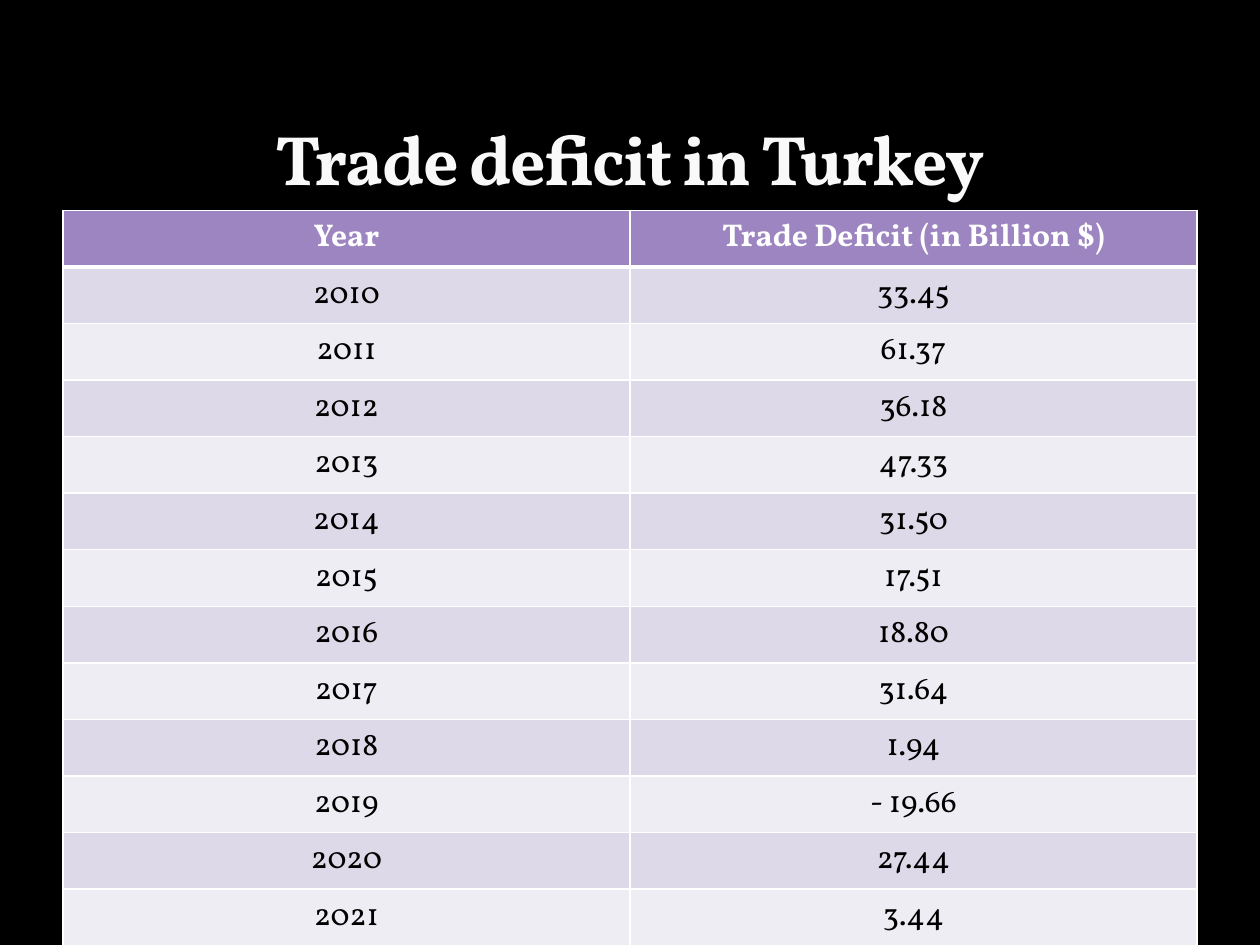
import pptx
import pptx.dml.color
import pptx.enum.text
import pptx.oxml.ns
import pptx.util
from lxml import etree

COLORS = {
    "background": "000000",
    "title": "F9F9F9",
    "header": "9C85C0",
    "band_dark": "DED9E8",
    "band_light": "EFEDF4",
    "border": "FFFFFF",
    "header_text": "FFFFFF",
    "body_text": "000000",
}
FONT = "Vollkorn"
SLIDE_W, SLIDE_H = pptx.util.Inches(10), pptx.util.Inches(7.5)
MARGIN = int(SLIDE_W * 0.05)
CONTENT_W = SLIDE_W - 2 * MARGIN
ROW_H = pptx.util.Inches(0.41)

HEADINGS = ("Year", "Trade Deficit (in Billion $)")
FIRST_YEAR = 2010
DEFICITS = ("33.45", "61.37", "36.18", "47.33", "31.50", "17.51",
            "18.80", "31.64", "1.94", "- 19.66", "27.44", "3.44")


def rgb(name):
    return pptx.dml.color.RGBColor.from_string(COLORS[name])


def add_centred_run(frame, text, size, color, bold):
    paragraph = frame.paragraphs[0]
    paragraph.alignment = pptx.enum.text.PP_ALIGN.CENTER
    run = paragraph.add_run()
    run.text = text
    run.font.name = FONT
    run.font.size = pptx.util.Pt(size)
    run.font.bold = bold
    run.font.color.rgb = rgb(color)
    return run


def set_borders(cell, bottom_width):
    """Outline a cell; borders must precede the fill in its properties."""
    properties = cell._tc.get_or_add_tcPr()
    widths = {"a:lnL": 1, "a:lnR": 1, "a:lnT": 1, "a:lnB": bottom_width}
    for position, (tag, width) in enumerate(widths.items()):
        line = etree.Element(pptx.oxml.ns.qn(tag), w=str(pptx.util.Pt(width)))
        fill = etree.SubElement(line, pptx.oxml.ns.qn("a:solidFill"))
        etree.SubElement(fill, pptx.oxml.ns.qn("a:srgbClr"), val=COLORS["border"])
        properties.insert(position, line)


def add_title(slide, text):
    title = slide.shapes.add_textbox(
        MARGIN, pptx.util.Inches(0.25), CONTENT_W, pptx.util.Inches(1.33))
    frame = title.text_frame
    frame.word_wrap = True
    frame.vertical_anchor = pptx.enum.text.MSO_ANCHOR.BOTTOM
    frame.margin_bottom = 0
    run = add_centred_run(frame, text, 40, "title", True)
    run.font._element.set("spc", "-100")


def add_deficit_table(slide):
    years = [(str(FIRST_YEAR + i), value) for i, value in enumerate(DEFICITS)]
    rows = [HEADINGS, *years]
    table = slide.shapes.add_table(
        len(rows), len(HEADINGS), MARGIN, pptx.util.Inches(1.67),
        CONTENT_W, ROW_H * len(rows)).table
    for r, values in enumerate(rows):
        table.rows[r].height = ROW_H
        is_header = r == 0
        band = "band_dark" if r % 2 else "band_light"
        for c, value in enumerate(values):
            cell = table.cell(r, c)
            cell.fill.solid()
            cell.fill.fore_color.rgb = rgb("header" if is_header else band)
            set_borders(cell, 3 if is_header else 1)
            if r == 1:
                top = cell._tc.tcPr.find(pptx.oxml.ns.qn("a:lnT"))
                top.set("w", str(pptx.util.Pt(3)))
            add_centred_run(cell.text_frame, value, 18,
                            "header_text" if is_header else "body_text", is_header)


def main():
    deck = pptx.Presentation()
    deck.slide_width, deck.slide_height = SLIDE_W, SLIDE_H
    slide = deck.slides.add_slide(deck.slide_layouts[6])
    slide.background.fill.solid()
    slide.background.fill.fore_color.rgb = rgb("background")
    add_deficit_table(slide)
    add_title(slide, "Trade deficit in Turkey")
    deck.save("out.pptx")


if __name__ == "__main__":
    main()
